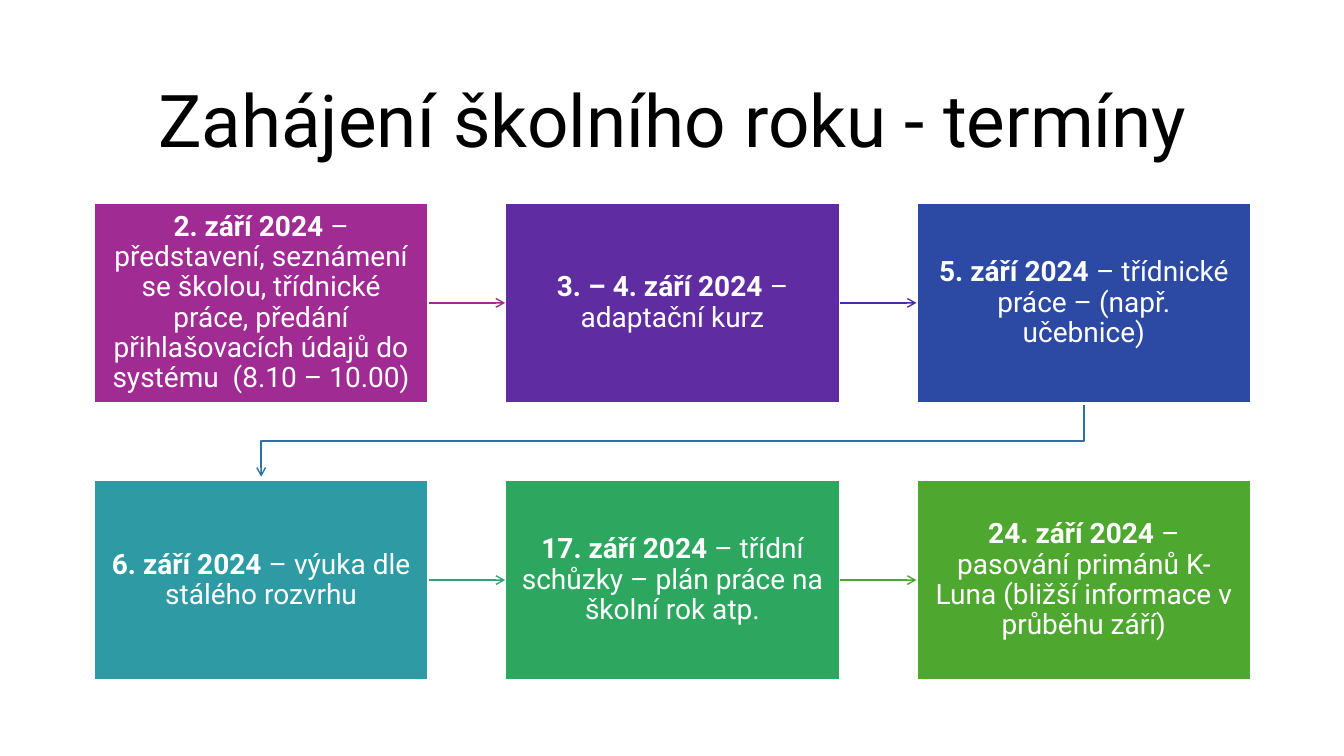
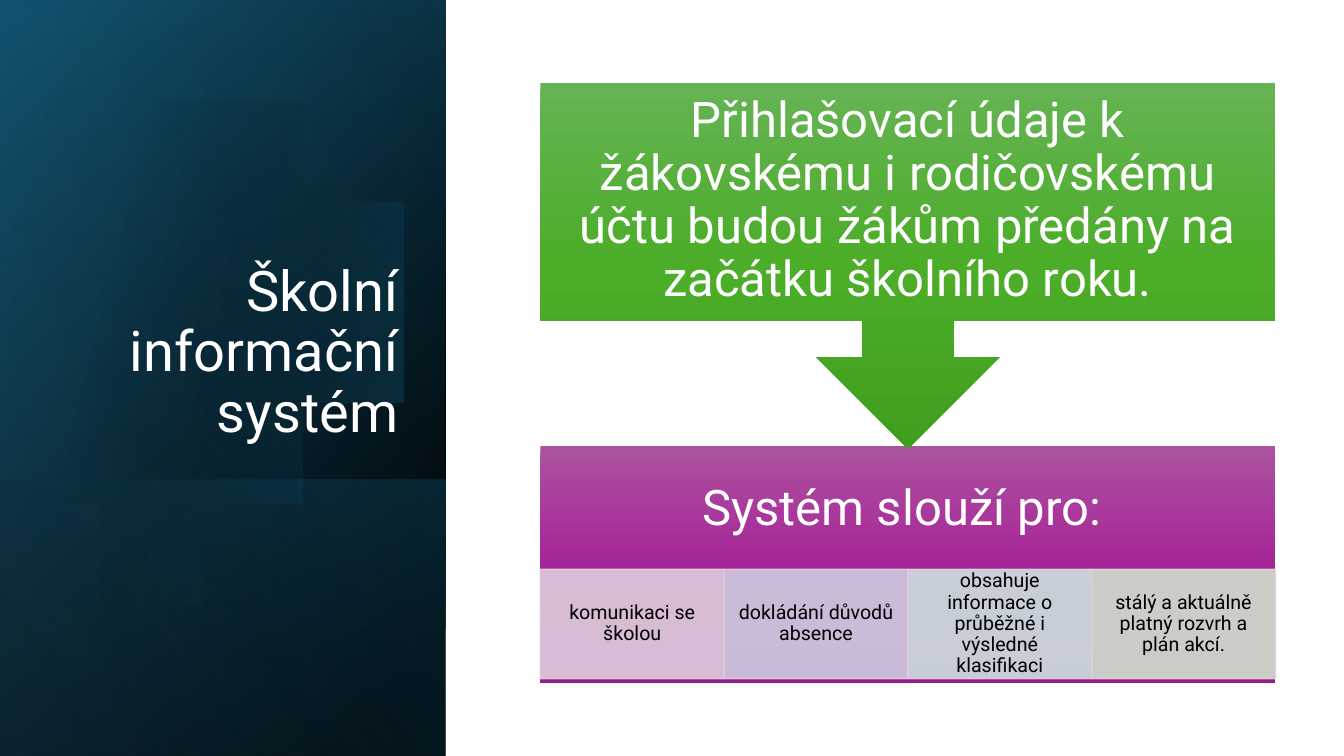
from collections import namedtuple
from math import acos, cos, radians, sin

from lxml.etree import SubElement
from pptx import Presentation
from pptx.dml.color import RGBColor
from pptx.enum.shapes import MSO_CONNECTOR, MSO_SHAPE
from pptx.enum.text import MSO_ANCHOR, MSO_AUTO_SIZE, PP_ALIGN
from pptx.oxml.ns import qn
from pptx.util import Inches, Pt

Box = namedtuple("Box", "x y w h")

WIDE, HIGH = 13.33, 7.5
FONT = "Roboto"
BLACK = RGBColor(0x00, 0x00, 0x00)
WHITE = RGBColor(0xFF, 0xFF, 0xFF)
NAVY = RGBColor(0x10, 0x48, 0x62)
TEAL = RGBColor(0x15, 0x60, 0x82)
SKY = RGBColor(0x46, 0xB1, 0xE1)
PLUM = RGBColor(0xA0, 0x2B, 0x93)
VIOLET = RGBColor(0x5F, 0x2C, 0xA1)
INDIGO = RGBColor(0x4B, 0x2C, 0xA2)
BLUE = RGBColor(0x2C, 0x49, 0xA3)
STEEL = RGBColor(0x2C, 0x71, 0xA4)
CYAN = RGBColor(0x2D, 0x9A, 0xA4)
JADE = RGBColor(0x2D, 0xA5, 0x73)
EMERALD = RGBColor(0x2D, 0xA6, 0x5F)
GREEN = RGBColor(0x4E, 0xA7, 0x2E)
PINK = RGBColor(0xDF, 0xCD, 0xDC)
LILAC = RGBColor(0xCF, 0xCD, 0xE0)
MIST = RGBColor(0xCD, 0xE1, 0xE0)
SAGE = RGBColor(0xD0, 0xE1, 0xCD)
GREENS = [(0, RGBColor(0x66, 0xB3, 0x54), 100), (50, RGBColor(0x4B, 0xAD, 0x28), 100),
          (100, RGBColor(0x40, 0x9F, 0x1E), 100)]
PLUMS = [(0, RGBColor(0xAC, 0x53, 0xA0), 100), (50, RGBColor(0xA6, 0x25, 0x98), 100),
         (100, RGBColor(0x99, 0x1C, 0x8B), 100)]

DATES = [
    ("2. září 2024 ", "– představení, seznámení se školou, třídnické práce, předání "
     "přihlašovacích údajů do systému  (8.10 – 10.00)", PLUM, PLUM),
    ("3. – 4. září 2024 ", "– adaptační kurz", VIOLET, INDIGO),
    ("5. září 2024", " – třídnické práce – (např. učebnice)", BLUE, STEEL),
    ("6. září 2024", " – výuka dle stálého rozvrhu", CYAN, JADE),
    ("17. září 2024", " – třídní schůzky – plán práce na školní rok atp.", EMERALD, GREEN),
    ("24. září 2024", " – pasování primánů K-Luna (bližší informace v průběhu září)",
     GREEN, None),
]
USES = [
    ("komunikaci se školou", PINK),
    ("dokládání důvodů absence", LILAC),
    ("obsahuje informace o průběžné i výsledné klasifikaci", MIST),
    ("stálý a aktuálně platný rozvrh a plán akcí.", SAGE),
]
LOGIN = ("Přihlašovací údaje k žákovskému i rodičovskému účtu budou žákům předány "
         "na začátku školního roku.")


def cell(box, col, row, cols, rows, gap_x=0, gap_y=0):
    """Return one cell of an even grid inside the box."""
    w = (box.w - gap_x * (cols - 1)) / cols
    h = (box.h - gap_y * (rows - 1)) / rows
    return Box(box.x + col * (w + gap_x), box.y + row * (h + gap_y), w, h)


def block(slide, box, kind=MSO_SHAPE.RECTANGLE):
    """Add a preset shape without line or shadow."""
    shape = slide.shapes.add_shape(kind, *map(Inches, box))
    shape.shadow.inherit = False
    shape.line.fill.background()
    return shape


def solid(shape, fill, edge, width):
    """Give a shape a plain fill and an edge."""
    shape.fill.solid()
    shape.fill.fore_color.rgb = fill
    shape.line.color.rgb = edge
    shape.line.width = Pt(width)


def fade(tint, share):
    """Set the opacity of a colour element in percent."""
    SubElement(tint, qn("a:alpha")).set("val", str(share * 1000))


def blend(shape, stops, angle):
    """Fill a shape with a clockwise linear gradient."""
    shape.fill.gradient()
    shape.fill.gradient_angle = 360 - angle
    group = next(shape.element.iter(qn("a:gsLst")))
    for old in list(group):
        group.remove(old)
    for place, colour, share in stops:
        stop = SubElement(group, qn("a:gs"))
        stop.set("pos", str(place * 1000))
        tint = SubElement(stop, qn("a:srgbClr"))
        tint.set("val", str(colour))
        if share < 100:
            fade(tint, share)


def write(shape, runs, size, colour, pads=(0.1, 0.05, 0.1, 0.05),
          align=PP_ALIGN.CENTER, anchor=MSO_ANCHOR.MIDDLE):
    """Write one paragraph of (text, bold) runs into a shape."""
    frame = shape.text_frame
    frame.word_wrap = True
    frame.auto_size = MSO_AUTO_SIZE.NONE
    frame.vertical_anchor = anchor
    (frame.margin_left, frame.margin_top,
     frame.margin_right, frame.margin_bottom) = map(Inches, pads)
    para = frame.paragraphs[0]
    para.alignment = align
    para.line_spacing = 0.9
    for text, bold in runs:
        run = para.add_run()
        run.text = text
        run.font.name = FONT
        run.font.size = Pt(size)
        run.font.bold = bold
        run.font.color.rgb = colour


def head(slide, box, text, size, colour, **style):
    """Place and format the title placeholder."""
    title = slide.shapes.title
    title.left, title.top, title.width, title.height = map(Inches, box)
    write(title, [(text, False)], size, colour, **style)


def arrow(link, colour):
    """Style a connector as a thin arrow."""
    link.line.color.rgb = colour
    link.line.width = Pt(1)
    SubElement(link.line._get_or_add_ln(), qn("a:tailEnd")).set("type", "arrow")
    SubElement(link.element.spPr, qn("a:effectLst"))


def join(slide, start, end, colour):
    """Link two neighbours in a row by a straight arrow."""
    link = slide.shapes.add_connector(MSO_CONNECTOR.STRAIGHT, 0, 0, 0, 0)
    link.begin_connect(start, 3)
    link.end_connect(end, 1)
    arrow(link, colour)


def turn(slide, start, end, colour):
    """Lead a bent arrow from below one box to the top of another."""
    x1, x2 = start.x + start.w / 2, end.x + end.w / 2
    y1, y2 = start.y + start.h + 0.02, end.y - 0.03
    mid_x, mid_y = (x1 + x2) / 2, (y1 + y2) / 2
    half_w, half_h = (y2 - y1) / 2, (x1 - x2) / 2
    link = slide.shapes.add_connector(
        MSO_CONNECTOR.ELBOW, Inches(mid_x - half_w), Inches(mid_y - half_h),
        Inches(mid_x + half_w), Inches(mid_y + half_h))
    link.rotation = 90
    arrow(link, colour)


def flow(slide, box, cols=3, rows=2):
    """Draw the dated cards and the arrows between them."""
    spots = [cell(box, n % cols, n // cols, cols, rows, 0.76, 0.76)
             for n in range(len(DATES))]
    cards = []
    for spot, (date, text, fill, _) in zip(spots, DATES):
        card = block(slide, spot)
        solid(card, fill, WHITE, 1.5)
        write(card, [(date, True), (text, False)], 20, WHITE, (0.16, 0.17, 0.16, 0.17))
        cards.append(card)
    for n, (*_, colour) in enumerate(DATES[:-1]):
        if (n + 1) % cols:
            join(slide, cards[n], cards[n + 1], colour)
        else:
            turn(slide, spots[n], spots[n + 1], colour)


def disc(slide, box):
    """Draw the pale circle cut off by the left edge of the box."""
    mid_x, mid_y, size = box.x + 1.43, box.y + 3.39, 2.29
    limit = acos(-1.43 / size)
    points = [(mid_x + size * cos(a), mid_y + size * sin(a))
              for a in (limit * n / 60 for n in range(-60, 61))]
    pen = slide.shapes.build_freeform(*points[0], scale=Inches(1))
    pen.add_line_segments(points[1:], close=True)
    shape = pen.convert_to_shape()
    shape.shadow.inherit = False
    shape.line.fill.background()
    blend(shape, [(29, BLACK, 0), (100, TEAL, 43)], 14)


def panel(slide, box):
    """Draw the layered dark side panel."""
    foot = Box(box.x, box.y + box.h - 2.74, box.w, 2.74)
    blend(block(slide, box), [(8, BLACK, 100), (100, NAVY, 100)], 220)
    blend(block(slide, box), [(0, BLACK, 0), (99, TEAL, 46)], 240)
    blend(block(slide, foot), [(2, TEAL, 29), (100, BLACK, 30)], 140)
    disc(slide, box)
    blend(block(slide, box), [(0, BLACK, 0), (99, SKY, 11)], 150)


def uses(slide, box):
    """Draw the purple box with its row of uses."""
    base = block(slide, box)
    blend(base, PLUMS, 90)
    write(base, [("Systém slouží pro: ", False)], 35, WHITE,
          (0.27, 0.27, 0.27, box.h * 0.46 + 0.27))
    strip = Box(box.x, box.y + box.h * 0.52, box.w, box.h * 0.46)
    for n, (text, fill) in enumerate(USES):
        tile = block(slide, cell(strip, n, 0, len(USES), 1))
        solid(tile, fill, PINK, 1)
        for tint in list(tile.element.spPr.iter(qn("a:srgbClr"))):
            fade(tint, 90)
        write(tile, [(text, False)], 14, BLACK, (0.11, 0.02, 0.11, 0.02))


def login(slide, box):
    """Draw the green callout that points down."""
    shape = block(slide, box, MSO_SHAPE.DOWN_ARROW_CALLOUT)
    blend(shape, GREENS, 90)
    write(shape, [(LOGIN, False)], 35, WHITE, (0.27,) * 4)


def dates(slide):
    """Build the slide of dates."""
    head(slide, Box(0.92, 0.61, 11.5, 1.24), "Zahájení školního roku - termíny", 52, BLACK)
    flow(slide, Box(0.93, 2.01, 11.48, 4.74))


def system(slide):
    """Build the slide on the school system."""
    panel(slide, Box(0, 0, 4.42, HIGH))
    title = slide.shapes.title.element
    title.getparent().append(title)
    head(slide, Box(0.64, 1.84, 3.41, 2.62), "Školní informační systém", 40, WHITE,
         align=PP_ALIGN.RIGHT, anchor=MSO_ANCHOR.BOTTOM)
    uses(slide, Box(5.36, 4.42, 7.29, 2.36))
    login(slide, Box(5.36, 0.82, 7.29, 3.63))


def main():
    """Build and save the deck."""
    deck = Presentation()
    deck.slide_width, deck.slide_height = Inches(WIDE), Inches(HIGH)
    for build in (dates, system):
        build(deck.slides.add_slide(deck.slide_layouts[5]))
    deck.save("out.pptx")


if __name__ == "__main__":
    main()
